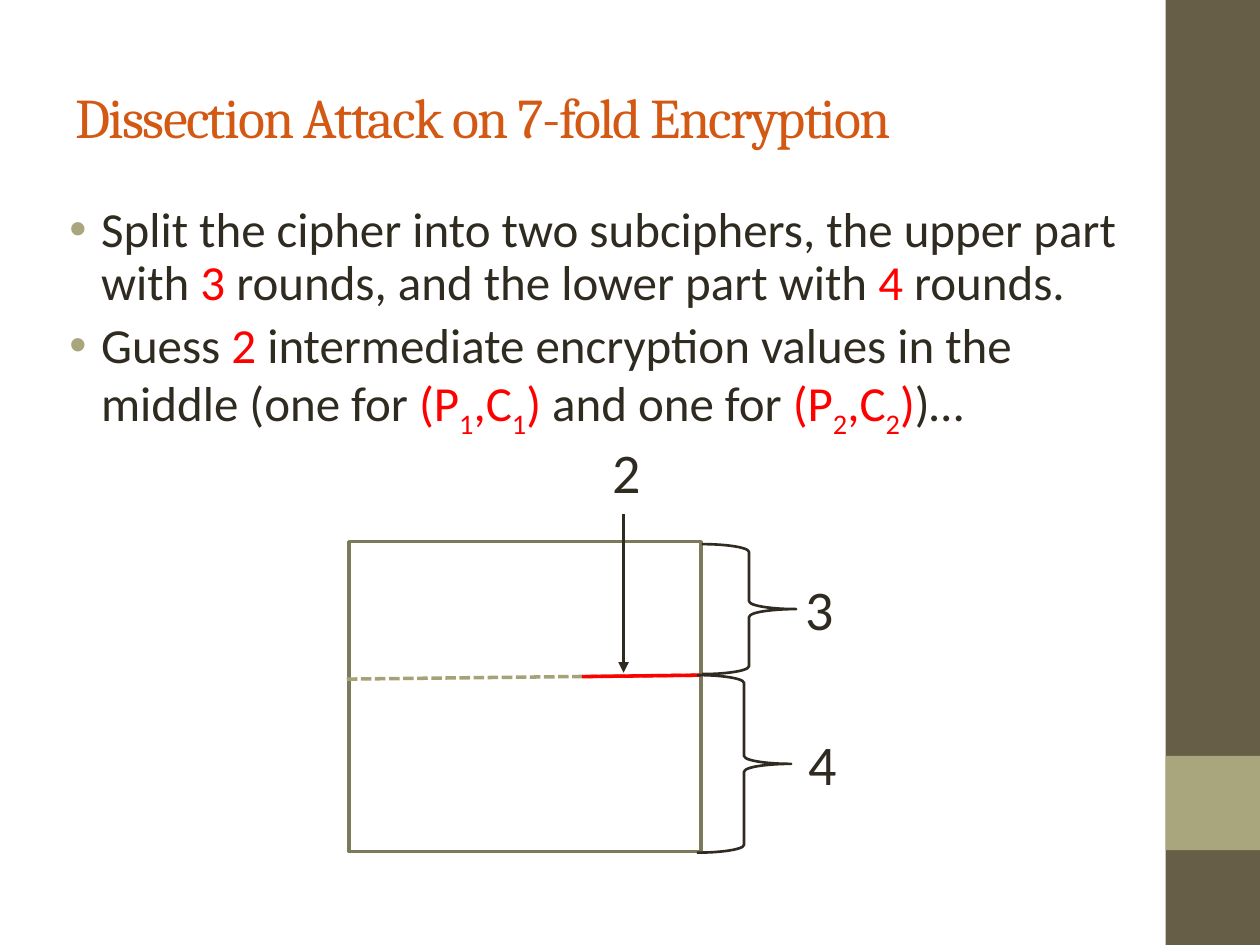
from lxml.etree import SubElement
from pptx import Presentation
from pptx.dml.color import RGBColor
from pptx.enum.dml import MSO_LINE
from pptx.enum.shapes import MSO_CONNECTOR, MSO_SHAPE
from pptx.enum.text import MSO_ANCHOR, PP_ALIGN
from pptx.oxml.ns import qn
from pptx.util import Cm, Pt

BROWN = RGBColor(0x67, 0x5E, 0x47)
SAGE = RGBColor(0xA9, 0xA5, 0x7C)
DASH = RGBColor(0xA6, 0xA2, 0x78)
OLIVE = RGBColor(0x7D, 0x7A, 0x5C)
ORANGE = RGBColor(0xD2, 0x58, 0x14)
INK = RGBColor(0x2F, 0x2B, 0x20)
RED = RGBColor(0xFF, 0x00, 0x00)

POINTS = [
    [("Split the cipher into two subciphers, the upper part with", INK, 0),
     (" 3 ", RED, 0), ("rounds, and the lower part with ", INK, 0),
     ("4", RED, 0), (" rounds.", INK, 0)],
    [("Guess ", INK, 0), ("2 ", RED, 0),
     ("intermediate encryption values in the middle (one for ", INK, 0),
     ("(P", RED, 0), ("1", RED, -25), (",C", RED, 0), ("1", RED, -25),
     (")", RED, 0), (" and one for ", INK, 0),
     ("(P", RED, 0), ("2", RED, -25), (",C", RED, 0), ("2", RED, -25),
     (")", RED, 0), (")…", INK, 0)],
]


def add_run(para, text, size, color, face="Calibri"):
    """Append a formatted run to a paragraph and return it."""
    run = para.add_run()
    run.text = text
    run.font.name = face
    run.font.size = Pt(size)
    run.font.color.rgb = color
    return run


def add_box(slide, kind, x, y, w, h, fill=None, line=None, width=2):
    """Add a preset shape, sized in centimetres."""
    box = slide.shapes.add_shape(kind, Cm(x), Cm(y), Cm(w), Cm(h))
    box.shadow.inherit = False
    if fill is None:
        box.fill.background()
    else:
        box.fill.solid()
        box.fill.fore_color.rgb = fill
    if line is None:
        box.line.fill.background()
    else:
        box.line.color.rgb = line
        box.line.width = Pt(width)
    return box


def add_line(slide, x1, y1, x2, y2, color, dash=None, arrow=False):
    """Add a straight line, dashed or arrowed on request."""
    link = slide.shapes.add_connector(
        MSO_CONNECTOR.STRAIGHT, Cm(x1), Cm(y1), Cm(x2), Cm(y2))
    link.line.color.rgb = color
    link.line.width = Pt(2)
    if dash is not None:
        link.line.dash_style = dash
    props = link.element.spPr
    if arrow:
        SubElement(props.find(qn("a:ln")), qn("a:tailEnd"), type="triangle")
    SubElement(props, qn("a:effectLst"))


def add_bar(slide, x, y, w, h):
    """Draw the side bar with its light square."""
    add_box(slide, MSO_SHAPE.RECTANGLE, x, y, w, h, BROWN)
    add_box(slide, MSO_SHAPE.RECTANGLE, x, y + 0.8 * h, w, w, SAGE)


def add_title(slide, x, y, w, h):
    """Place and fill the title."""
    title = slide.shapes.title
    title.left, title.top, title.width, title.height = Cm(x), Cm(y), Cm(w), Cm(h)
    frame = title.text_frame
    frame.vertical_anchor = MSO_ANCHOR.MIDDLE
    para = frame.paragraphs[0]
    para.alignment = PP_ALIGN.LEFT
    run = add_run(para, "Dissection Attack on 7-fold Encryption", 32, ORANGE, "Cambria")
    run.font._element.set("spc", "-100")


def add_body(slide, x, y, w, h):
    """Write the bulleted points."""
    frame = slide.shapes.add_textbox(Cm(x), Cm(y), Cm(w), Cm(h)).text_frame
    frame.word_wrap = True
    for i, point in enumerate(POINTS):
        para = frame.add_paragraph() if i else frame.paragraphs[0]
        para.line_spacing = 0.9
        para.space_before = Pt(5.6 if i else 0)
        props = para._p.get_or_add_pPr()
        props.set("marL", str(Cm(0.95)))
        props.set("indent", str(Cm(-0.64)))
        tint = SubElement(props, qn("a:buClr"))
        SubElement(tint, qn("a:srgbClr"), val=str(SAGE))
        SubElement(props, qn("a:buFont"), typeface="Arial")
        SubElement(props, qn("a:buChar"), char="•")
        for text, color, shift in point:
            run = add_run(para, text, 28, color)
            if shift:
                run.font._element.set("baseline", str(shift * 1000))


def add_cipher(slide, x, y, w, h):
    """Draw the split cipher block with its braces, arrow and counts."""
    cut = y + 2.69
    add_box(slide, MSO_SHAPE.RECTANGLE, x, y, w, h, line=OLIVE)
    add_line(slide, x - 0.05, cut + 0.08, x + w, cut, DASH, MSO_LINE.SQUARE_DOT)
    add_line(slide, x + w, cut, x + 4.69, cut + 0.03, RED)
    for left, top, tall in ((7.11, 0.05, 2.62), (7.01, 2.69, 3.58)):
        add_box(slide, MSO_SHAPE.RIGHT_BRACE, x + left, y + top, 1.9, tall,
                line=INK, width=1.5)
    add_line(slide, x + 5.53, y - 0.56, x + 5.53, cut - 0.05, INK, arrow=True)
    for text, left, top in (("3", 8.94, 0.54), ("4", 9.01, 3.66), ("2", 5.05, -2.23)):
        label = slide.shapes.add_textbox(Cm(x + left), Cm(y + top), Cm(1.68), Cm(1.6))
        label.text_frame.word_wrap = True
        add_run(label.text_frame.paragraphs[0], text, 32, INK)


def main():
    """Build and save the slide."""
    deck = Presentation()
    deck.slide_width, deck.slide_height = Cm(25.4), Cm(19.05)
    slide = deck.slides.add_slide(deck.slide_layouts[5])
    add_bar(slide, 23.5, 0, 1.9, 19.05)
    add_title(slide, 1.27, 0.76, 21.16, 3.18)
    add_body(slide, 0.84, 4.01, 22.02, 14.4)
    add_cipher(slide, 7.04, 10.92, 7.09, 6.25)
    deck.save("out.pptx")


if __name__ == "__main__":
    main()
